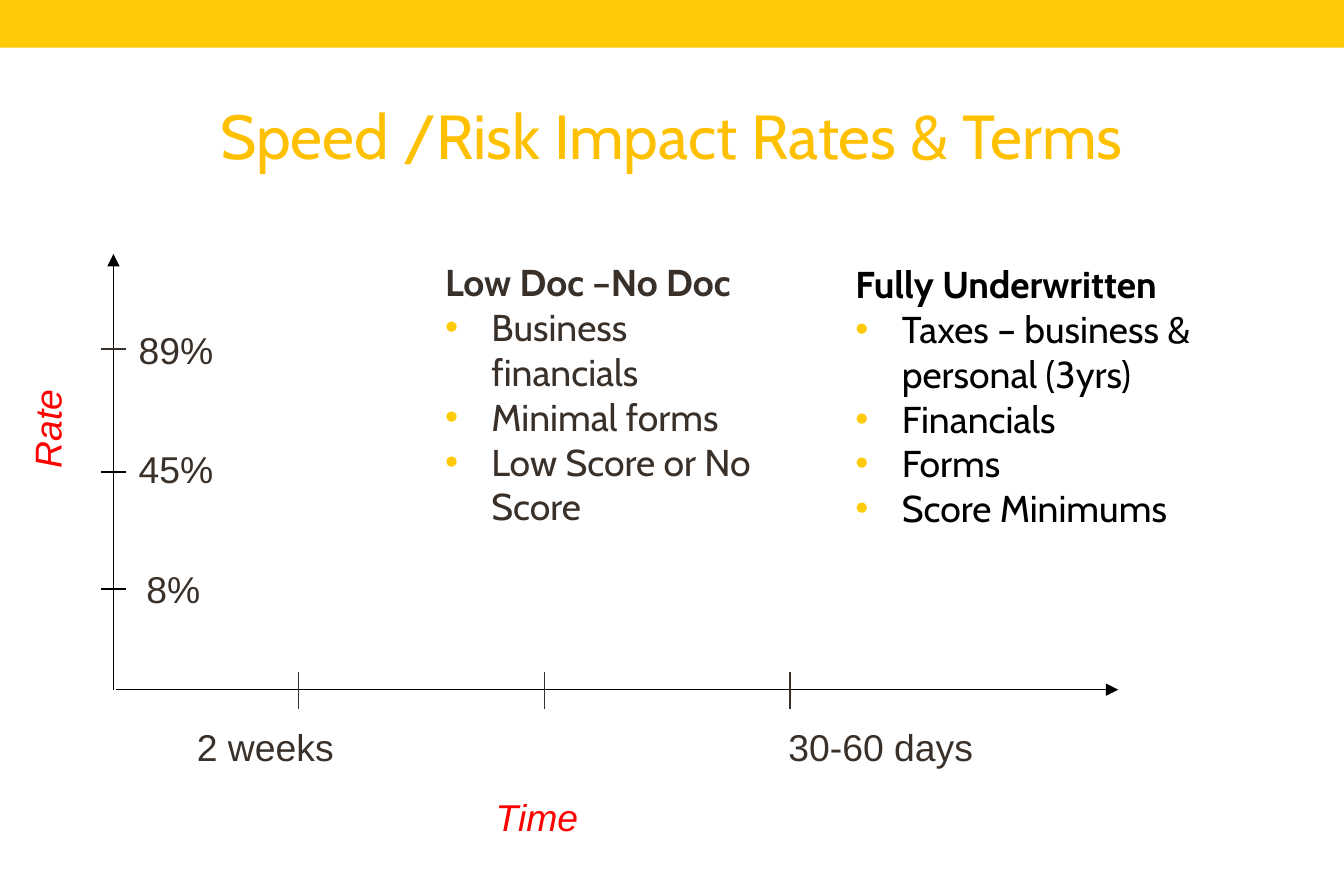
from dataclasses import dataclass

from lxml.etree import SubElement
from pptx import Presentation
from pptx.dml.color import RGBColor
from pptx.enum.shapes import MSO_CONNECTOR, MSO_SHAPE
from pptx.enum.text import MSO_ANCHOR, PP_ALIGN
from pptx.oxml.ns import qn
from pptx.util import Cm, Pt


@dataclass(frozen=True)
class Theme:
    band: str = "FFCA08"
    title: str = "FFC000"
    text: str = "39302A"
    black: str = "000000"
    axis_name: str = "FF0000"
    heading_font: str = "Cabin"
    label_font: str = "Arial"
    title_size: int = 30
    text_size: int = 18
    line_width: float = 0.75


class SlideBuilder:
    def __init__(self, presentation, theme):
        self.theme = theme
        self.slide = presentation.slides.add_slide(presentation.slide_layouts[5])

    def add_run(self, paragraph, text, font, size, color, bold=False, italic=False):
        run = paragraph.add_run()
        run.text = text
        run.font.name = font
        run.font.size = Pt(size)
        run.font.color.rgb = RGBColor.from_string(color)
        run.font.bold = bold
        run.font.italic = italic

    def band(self, width, height):
        shape = self.slide.shapes.add_shape(MSO_SHAPE.RECTANGLE, 0, 0, width, height)
        shape.shadow.inherit = False
        shape.fill.solid()
        shape.fill.fore_color.rgb = RGBColor.from_string(self.theme.band)
        shape.line.fill.background()

    def title(self, text, left, top, width, height):
        shape = self.slide.shapes.title
        shape.left, shape.top = Cm(left), Cm(top)
        shape.width, shape.height = Cm(width), Cm(height)
        shape.text_frame.vertical_anchor = MSO_ANCHOR.MIDDLE
        paragraph = shape.text_frame.paragraphs[0]
        paragraph.alignment = PP_ALIGN.CENTER
        self.add_run(paragraph, text, self.theme.heading_font,
                     self.theme.title_size, self.theme.title)

    def text_box(self, left, top, width, height):
        shape = self.slide.shapes.add_textbox(Cm(left), Cm(top), Cm(width), Cm(height))
        shape.text_frame.word_wrap = True
        return shape

    def label(self, text, left, top, width, color=None, italic=False, rotation=0):
        shape = self.text_box(left, top, width, 1.02)
        shape.rotation = rotation
        self.add_run(shape.text_frame.paragraphs[0], text, self.theme.label_font,
                     self.theme.text_size, color or self.theme.text, italic=italic)

    def bullet_list(self, heading, items, left, top, width, height, color):
        frame = self.text_box(left, top, width, height).text_frame
        font, size = self.theme.heading_font, self.theme.text_size
        self.add_run(frame.paragraphs[0], heading, font, size, color, bold=True)
        for item in items:
            paragraph = frame.add_paragraph()
            self.add_bullet(paragraph)
            self.add_run(paragraph, item, font, size, color)

    def add_bullet(self, paragraph):
        properties = paragraph._p.get_or_add_pPr()
        indent = Cm(0.79)
        properties.set("marL", str(indent))
        properties.set("indent", str(-indent))
        bullet_color = SubElement(properties, qn("a:buClr"))
        SubElement(bullet_color, qn("a:srgbClr"), val=self.theme.band)
        SubElement(properties, qn("a:buFont"), typeface="Arial")
        SubElement(properties, qn("a:buChar"), char="•")

    def line(self, start, end, color, arrow=False):
        connector = self.slide.shapes.add_connector(
            MSO_CONNECTOR.STRAIGHT, *(Cm(value) for value in start + end))
        connector.line.color.rgb = RGBColor.from_string(color)
        connector.line.width = Pt(self.theme.line_width)
        if arrow:
            SubElement(connector.line._get_or_add_ln(), qn("a:tailEnd"), type="triangle")
        SubElement(connector._element.spPr, qn("a:effectLst"))


def main():
    presentation = Presentation()
    presentation.slide_width = Cm(22.86)
    presentation.slide_height = Cm(15.24)
    theme = Theme()
    builder = SlideBuilder(presentation, theme)

    # Header
    builder.band(presentation.slide_width, Cm(0.81))
    builder.title("Speed /Risk Impact Rates & Terms", 1.14, 1.19, 20.57, 2.21)

    # Axes and their names
    axis_x, axis_y = 1.93, 11.73
    builder.line((axis_x, axis_y), (axis_x, 4.32), theme.black, arrow=True)
    builder.line((axis_x + 0.05, axis_y), (19.02, axis_y), theme.black, arrow=True)
    builder.label("Rate", -0.15, 6.76, 1.9, theme.axis_name, italic=True, rotation=270)
    builder.label("Time", 8.18, 13.39, 4.65, theme.axis_name, italic=True)

    # Rate ticks and labels
    rates = [("89%", 2.11, 5.94, theme.text),
             ("45%", 2.11, 8.03, theme.black),
             ("8%", 2.24, 10.02, theme.black)]
    for index, (text, left, tick_y, color) in enumerate(rates):
        builder.line((axis_x - 0.21, tick_y), (axis_x + 0.22, tick_y), color)
        builder.label(text, left, 5.44 + 2.03 * index, 2)

    # Time ticks and labels
    for index in range(3):
        tick_x = 5.08 + 4.18 * index
        builder.line((tick_x, 11.43), (tick_x, 12.06), theme.text)
    for text, left in [("2 weeks", 3.1), ("30-60 days", 13.16)]:
        builder.label(text, left, 12.19, 3.81)

    # Loan types
    builder.bullet_list("Low Doc –No Doc",
                        ["Business financials", "Minimal forms", "Low Score or No Score"],
                        7.32, 4.29, 6.15, 4.22, theme.text)
    builder.bullet_list("Fully Underwritten",
                        ["Taxes – business & personal (3yrs)", "Financials", "Forms",
                         "Score Minimums"],
                        14.3, 4.32, 8.05, 4.88, theme.black)

    presentation.save("out.pptx")


if __name__ == "__main__":
    main()
